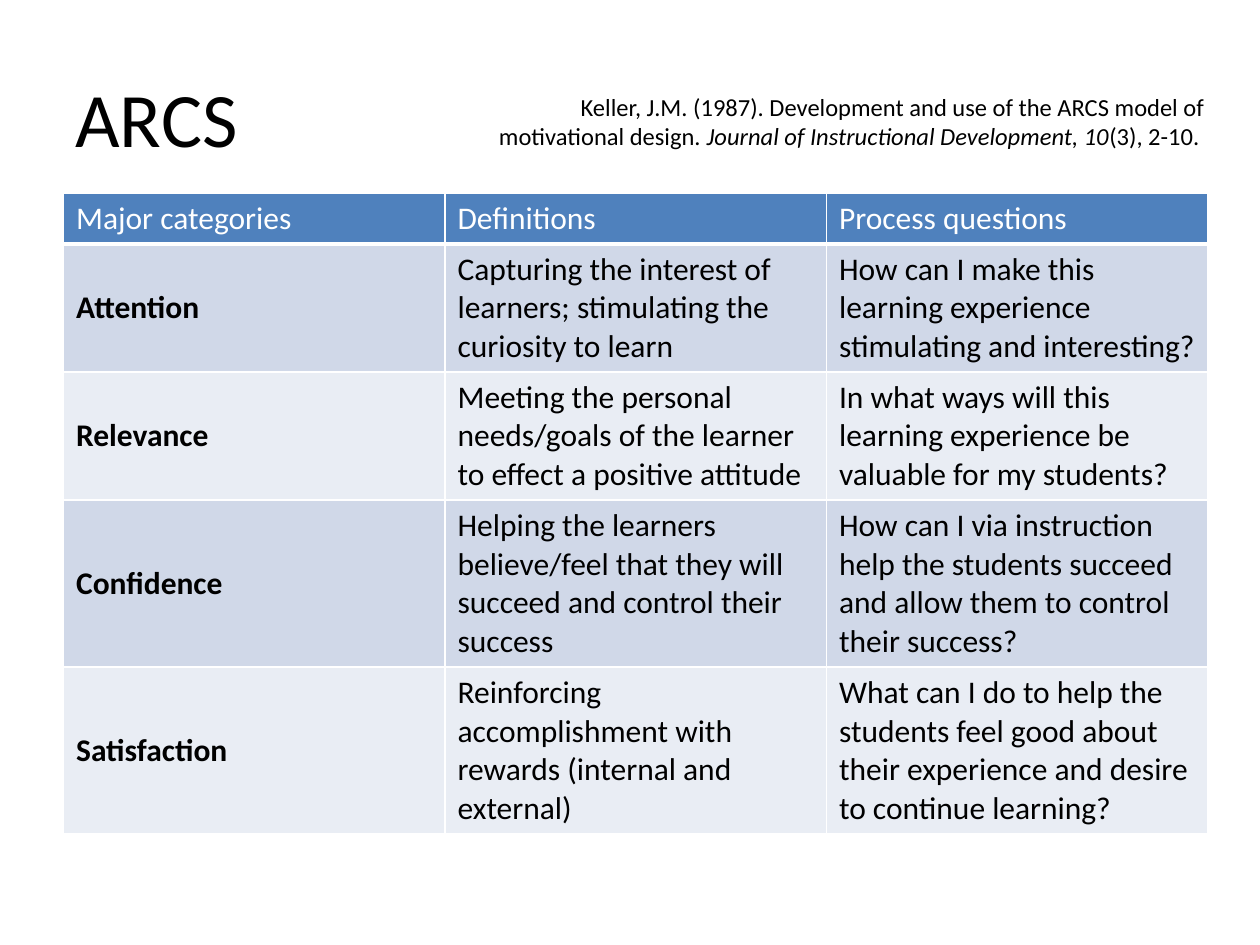
import pptx
import pptx.dml.color
import pptx.enum.text
import pptx.oxml
import pptx.oxml.ns
import pptx.util

Pt = pptx.util.Pt
ALIGN = pptx.enum.text.PP_ALIGN
ANCHOR = pptx.enum.text.MSO_ANCHOR

FONT = "Calibri"
BLACK, WHITE = "000000", "FFFFFF"
HEADER_FILL = "4F81BD"
BAND_FILLS = ["D0D8E8", "E9EDF4"]
COLUMN_WIDTH = 218
ROW_HEIGHTS = [29.2, 73.2, 73.2, 95.4, 95.4]

ROWS = [
    ("Major categories", "Definitions", "Process questions"),
    ("Attention",
     "Capturing the interest of learners; stimulating the curiosity to learn",
     "How can I make this learning experience stimulating and interesting?"),
    ("Relevance",
     "Meeting the personal needs/goals of the learner to effect a positive attitude",
     "In what ways will this learning experience be valuable for my students?"),
    ("Confidence",
     "Helping the learners believe/feel that they will succeed and control their success",
     "How can I via instruction help the students succeed and allow them to control their success?"),
    ("Satisfaction",
     "Reinforcing accomplishment with rewards (internal and external)",
     "What can I do to help the students feel good about their experience and desire to continue learning?"),
]


def color(value):
    return pptx.dml.color.RGBColor.from_string(value)


def add_run(p, text, size, fill=BLACK, bold=False, italic=False):
    r = p.add_run()
    r.text = text
    r.font.name = FONT
    r.font.size = Pt(size)
    r.font.bold = bold
    r.font.italic = italic
    r.font.color.rgb = color(fill)


def add_text(s, left, top, width, height, anchor, align):
    sp = s.shapes.add_textbox(Pt(left), Pt(top), Pt(width), Pt(height))
    tf = sp.text_frame
    tf.word_wrap = True
    tf.vertical_anchor = anchor
    p = tf.paragraphs[0]
    p.alignment = align
    return p


def set_borders(cell, bottom):
    tc_pr = cell._tc.get_or_add_tcPr()
    ns = pptx.oxml.ns.nsdecls("a")
    widths = {"lnL": 1, "lnR": 1, "lnT": 1, "lnB": bottom}
    for i, (side, width) in enumerate(widths.items()):
        tc_pr.insert(i, pptx.oxml.parse_xml(
            f'<a:{side} {ns} w="{Pt(width)}"><a:solidFill>'
            f'<a:srgbClr val="{WHITE}"/></a:solidFill></a:{side}>'))


def fill_cell(cell, text, fill, header, bold):
    cell.fill.solid()
    cell.fill.fore_color.rgb = color(fill)
    cell.vertical_anchor = ANCHOR.TOP if header else ANCHOR.MIDDLE
    add_run(cell.text_frame.paragraphs[0], text, 18, WHITE if header else BLACK, bold)
    set_borders(cell, 3 if header else 1)


def add_arcs_table(s, left, top):
    columns = len(ROWS[0])
    table = s.shapes.add_table(len(ROWS), columns, Pt(left), Pt(top),
                               Pt(COLUMN_WIDTH * columns), Pt(sum(ROW_HEIGHTS))).table
    for column in table.columns:
        column.width = Pt(COLUMN_WIDTH)
    for i, (row, height) in enumerate(zip(ROWS, ROW_HEIGHTS)):
        table.rows[i].height = Pt(height)
        header = i == 0
        fill = HEADER_FILL if header else BAND_FILLS[(i - 1) % 2]
        for j, text in enumerate(row):
            fill_cell(table.cell(i, j), text, fill, header, j == 0 and not header)


def main():
    prs = pptx.Presentation()
    prs.slide_width, prs.slide_height = Pt(720), Pt(540)
    s = prs.slides.add_slide(prs.slide_layouts[6])

    title = add_text(s, 36, 21.6, 648, 90, ANCHOR.MIDDLE, ALIGN.LEFT)
    add_run(title, "ARCS", 44)

    add_arcs_table(s, 36.3, 110.2)

    citation = add_text(s, 257.8, 49, 437.8, 41, ANCHOR.TOP, ALIGN.RIGHT)
    add_run(citation, "Keller, J.M. (1987). Development and use of the ARCS model of motivational design. ", 14)
    add_run(citation, "Journal of Instructional Development, 10", 14, italic=True)
    add_run(citation, "(3), 2-10. ", 14)

    prs.save("out.pptx")


if __name__ == "__main__":
    main()
